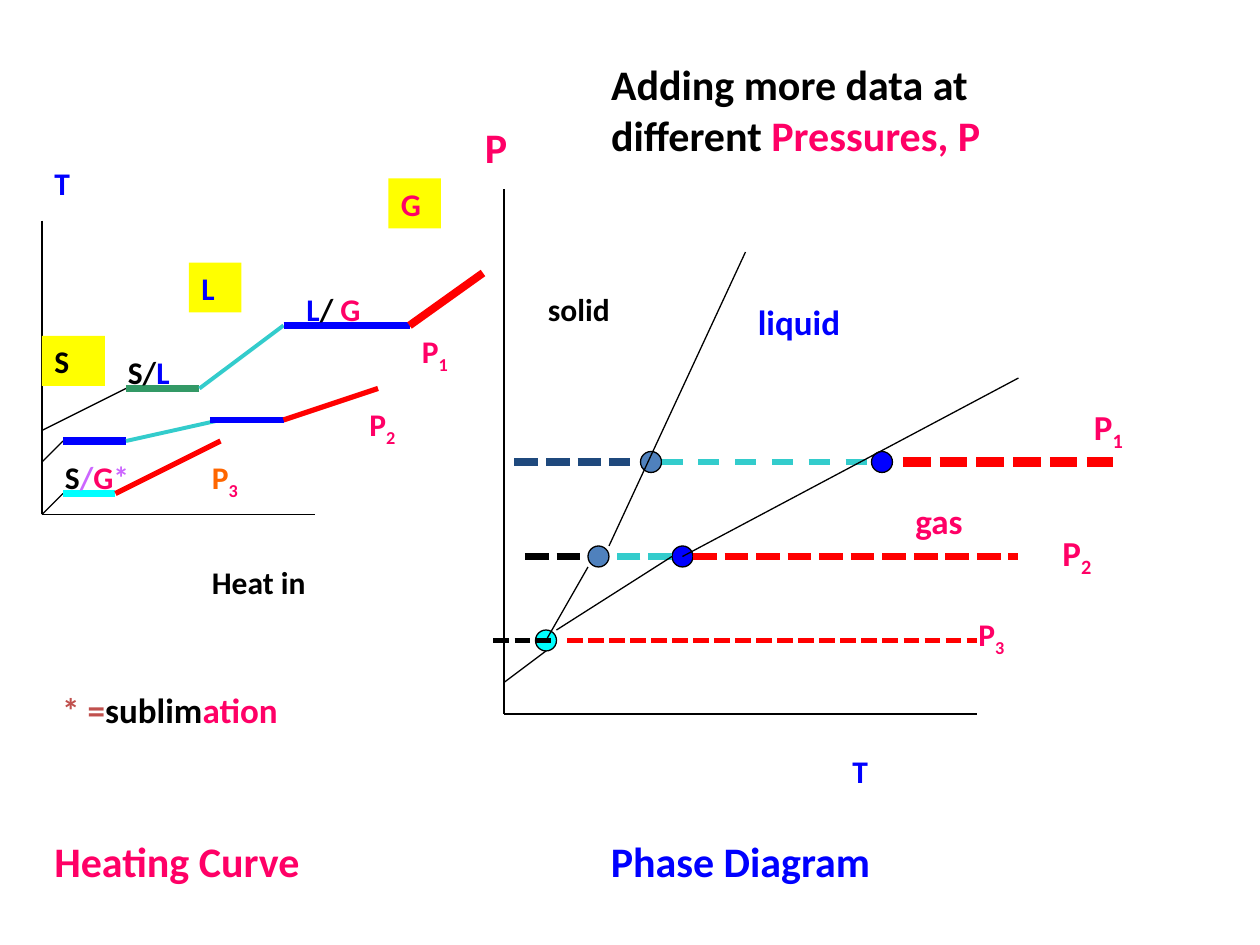
from lxml import etree
from pptx import Presentation
from pptx.dml.color import RGBColor
from pptx.enum import dml, shapes, text
from pptx.oxml import ns
from pptx.util import Emu, Pt

PX = 9525  # EMU in one px, at 96 px to the inch
FONT = "Calibri"
BLACK, BLUE, PINK, RED = "000000", "0000FF", "FF0066", "FF0000"
TEAL, CYAN, STEEL, YELLOW = "33CCCC", "00FFFF", "4F81BD", "FFFF00"
LILAC, ORANGE = "CC66FF", "FF6600"
DOT, DASH = dml.MSO_LINE.SQUARE_DOT, dml.MSO_LINE.DASH
THIN = 0.75

# Axes, as vertical end, origin and horizontal end
AXES = [
    [(384, 144), (384, 544), (744, 544)],
    [(32, 168), (32, 392), (240, 392)],
]

# Heating curves: x1, y1, x2, y2, colour, width in points
HEATING = [
    # P1
    (32, 328, 96, 296, BLACK, THIN),
    (96, 296, 152, 296, "339966", 4.5),
    (152, 296, 216, 248, TEAL, 2.25),
    (216, 248, 312, 248, BLUE, 4.5),
    (312, 248, 368, 208, RED, 4.5),
    # P2
    (32, 352, 48, 336, BLACK, THIN),
    (48, 336, 96, 336, BLUE, 4.5),
    (96, 336, 168, 320, TEAL, 2.25),
    (160, 320, 216, 320, BLUE, 3),
    (216, 320, 288, 296, RED, 3),
    # P3
    (32, 392, 48, 376, BLACK, THIN),
    (48, 376, 88, 376, CYAN, 4.5),
    (88, 376, 168, 336, RED, 3),
]

# Phase changes on the phase diagram: left, top, colour
POINT_SIZE = 16
POINTS = [
    (488, 344, STEEL), (664, 344, BLUE),
    (448, 416, STEEL), (512, 416, BLUE),
    (408, 480, CYAN),
]

# Constant pressure lines: y, then x1, x2, colour, width, dash
ISOBARS = [
    (352, [(392, 480, "1F497D", 4.5, DOT), (504, 664, TEAL, 3, DASH),
           (688, 848, RED, 5.25, DOT)]),
    (424, [(400, 448, BLACK, 4.5, DOT), (512, 464, TEAL, 4.5, DOT),
           (528, 776, RED, 4.5, DOT)]),
    (488, [(376, 424, BLACK, 3, DOT), (432, 744, RED, 3, DOT)]),
]

# Phase boundaries: x1, y1, x2, y2
BOUNDARIES = [
    (424, 480, 512, 424), (520, 424, 776, 288), (416, 488, 448, 432),
    (464, 416, 568, 192), (416, 496, 384, 520),
]

# Labels: left, top, width, text size, fill, runs of (text, colour)
# A digit alone in a run is a subscript.
TITLE = (456, 40, 408, 24, None,
         [("Adding more data at different ", BLACK), ("Pressures, P", PINK)])
LABELS = [
    (32, 256, 48, 18, YELLOW, [("S", BLACK)]),
    (144, 200, 40, 18, YELLOW, [("L", BLUE)]),
    (296, 136, 40, 18, YELLOW, [("G", PINK)]),
    (224, 216, 72, 18, None, [("L", BLUE), ("/ ", BLACK), ("G", PINK)]),
    (88, 264, 88, 18, None, [("S/", BLACK), ("L", BLUE)]),
    (40, 344, 72, 18, None,
     [("S", BLACK), ("/", LILAC), ("G", PINK), ("*", LILAC)]),
    (312, 248, 56, 18, None, [("P", PINK), ("1", PINK)]),
    (272, 304, 56, 18, None, [("P", PINK), ("2", PINK)]),
    (152, 344, 56, 18, None, [("P", ORANGE), ("3", PINK)]),
    (824, 304, 72, 20, None, [("P", PINK), ("1", PINK)]),
    (800, 400, 72, 20, None, [("P", PINK), ("2", PINK)]),
    (736, 464, 56, 18, None, [("P", PINK), ("3", PINK)]),
    (360, 88, 64, 24, None, [("P", PINK)]),
    (640, 568, 64, 18, None, [("T", BLUE)]),
    (32, 120, 64, 18, None, [("T", BLUE)]),
    (152, 424, 136, 18, None, [("Heat in", BLACK)]),
    (408, 216, 80, 18, None, [("solid", BLACK)]),
    (568, 224, 112, 20, None, [("liquid", BLUE)]),
    (688, 376, 72, 20, None, [("gas", PINK)]),
    (32, 632, 248, 24, None, [("Heating Curve", PINK)]),
    (456, 632, 424, 24, None, [("Phase Diagram", BLUE)]),
    (32, 520, 232, 20, None,
     [(" * =", "C0504D"), ("sublim", BLACK), ("ation", PINK)]),
]
LINE_HEIGHT = {18: 38, 20: 41, 24: 48}


def px(*lengths):
    return [Emu(length * PX) for length in lengths]


def colour(hex_value):
    return RGBColor.from_string(hex_value)


def draw_line(page, x1, y1, x2, y2, hue=BLACK, width=THIN, dash=None):
    line = page.shapes.add_connector(
        shapes.MSO_CONNECTOR.STRAIGHT, *px(x1, y1, x2, y2))
    line.line.color.rgb = colour(hue)
    line.line.width = Pt(width)
    if dash:
        line.line.dash_style = dash
    etree.SubElement(line.element.spPr, ns.qn("a:effectLst"))


def draw_point(page, left, top, hue):
    point = page.shapes.add_shape(
        shapes.MSO_SHAPE.OVAL, *px(left, top, POINT_SIZE, POINT_SIZE))
    point.shadow.inherit = False
    point.fill.solid()
    point.fill.fore_color.rgb = colour(hue)
    point.line.color.rgb = colour(BLACK)
    point.line.width = Pt(THIN)


def write_label(box, left, top, width, size, fill, runs, lines=1):
    box.left, box.top, box.width, box.height = px(
        left, top, width, LINE_HEIGHT[size] * lines)
    if fill:
        box.fill.solid()
        box.fill.fore_color.rgb = colour(fill)
    frame = box.text_frame
    frame.word_wrap = True
    frame.auto_size = text.MSO_AUTO_SIZE.NONE
    frame.vertical_anchor = text.MSO_ANCHOR.TOP
    para = frame.paragraphs[0]
    para.alignment = text.PP_ALIGN.LEFT
    for words, hue in runs:
        span = para.add_run()
        span.text = words
        span.font.name = FONT
        span.font.size = Pt(size)
        span.font.bold = True
        span.font.color.rgb = colour(hue)
        if words.isdigit():
            span.font._element.set("baseline", "-25000")


def main():
    deck = Presentation()
    deck.slide_width, deck.slide_height = px(960, 720)
    page = deck.slides.add_slide(deck.slide_layouts[5])
    write_label(page.shapes.title, *TITLE, lines=2)

    # Axes and heating curves
    for top, origin, end in AXES:
        draw_line(page, *top, *origin)
        draw_line(page, *origin, *end)
    for segment in HEATING:
        draw_line(page, *segment)

    # Phase diagram
    for point in POINTS:
        draw_point(page, *point)
    for y, segments in ISOBARS:
        for x1, x2, hue, width, dash in segments:
            draw_line(page, x1, y, x2, y, hue, width, dash)
    for boundary in BOUNDARIES:
        draw_line(page, *boundary)

    # Labels
    for label in LABELS:
        write_label(page.shapes.add_textbox(0, 0, 0, 0), *label)

    deck.save("out.pptx")


if __name__ == "__main__":
    main()
